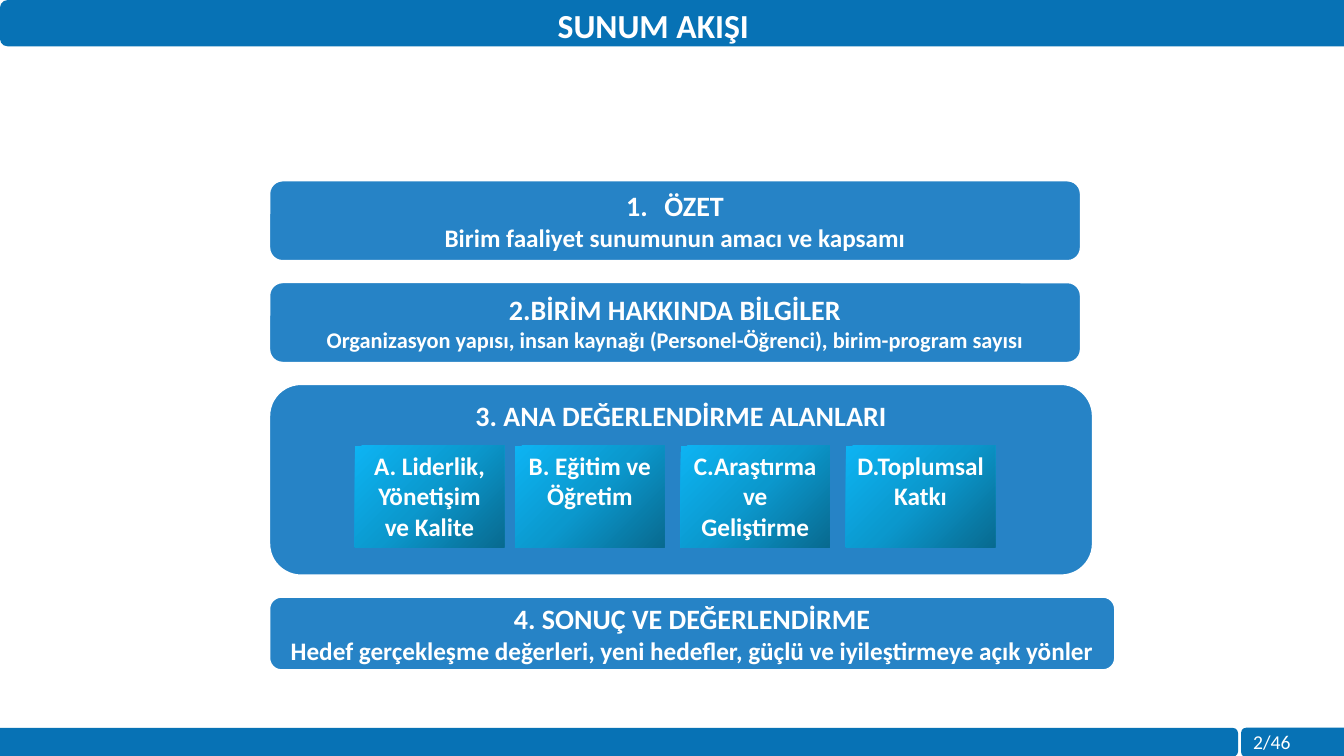
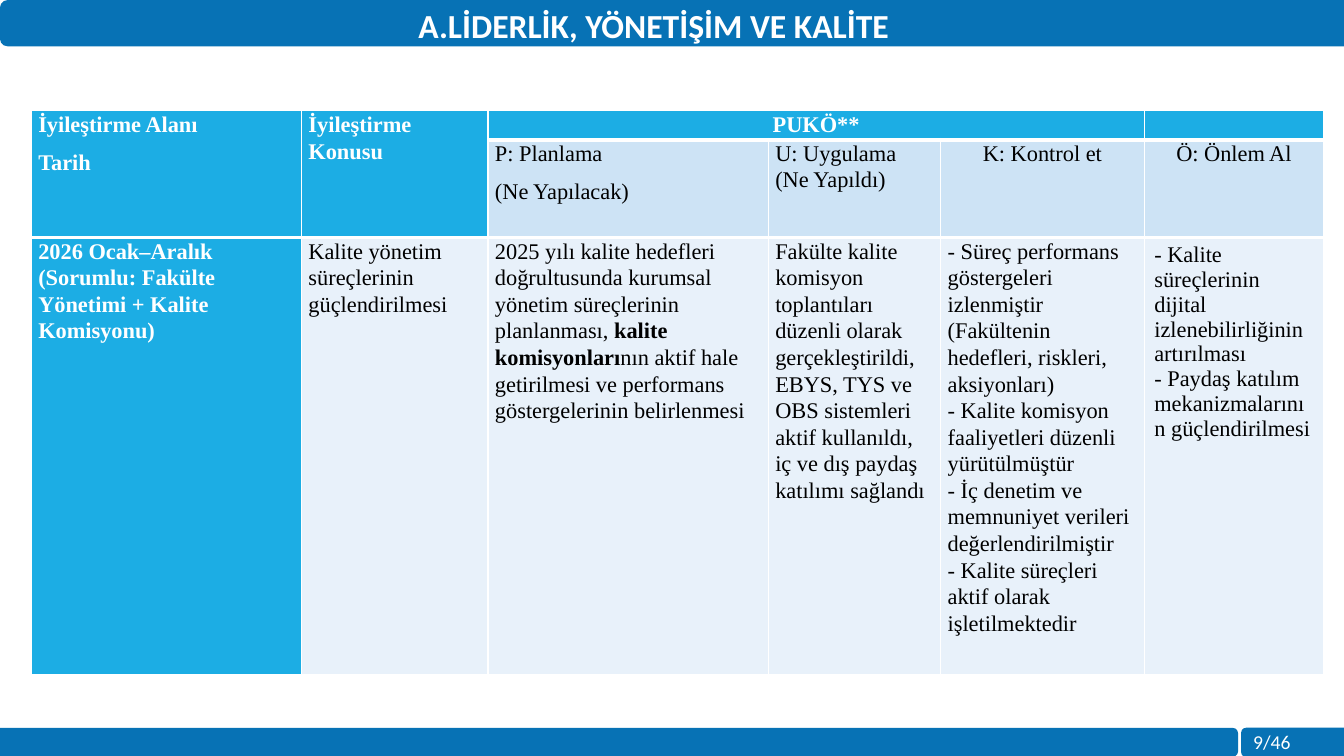
"""Build two slides: the agenda of a unit report and its improvement table."""
from lxml import etree
from pptx import Presentation
from pptx.dml.color import RGBColor
from pptx.enum.shapes import MSO_SHAPE
from pptx.enum.text import MSO_ANCHOR, MSO_AUTO_SIZE, PP_ALIGN
from pptx.oxml import parse_xml
from pptx.oxml.ns import nsdecls, qn
from pptx.util import Inches, Pt

BAND, ROUND, RECT = MSO_SHAPE.ROUND_2_SAME_RECTANGLE, MSO_SHAPE.ROUNDED_RECTANGLE, MSO_SHAPE.RECTANGLE
TOP, MIDDLE = MSO_ANCHOR.TOP, MSO_ANCHOR.MIDDLE
LEFT, CENTER, JUSTIFY = PP_ALIGN.LEFT, PP_ALIGN.CENTER, PP_ALIGN.JUSTIFY
HEX = {"white": "FFFFFF", "black": "000000", "band": "0772B5", "box": "2683C6",
       "head": "1CADE4", "sub": "CDE3F5", "body": "E8F1FA",
       "dark": "086A90", "mid": "0B98CD", "light": "0DB4F3"}
RGB = {name: RGBColor.from_string(code) for name, code in HEX.items()}
SANS, SERIF = "Calibri", "Times New Roman"


def write(frame, text, size=18, bold=True, color="white", font=SANS,
          align=CENTER, line=None, after=None, strong=""):
    para = frame.add_paragraph() if frame.text else frame.paragraphs[0]
    para.alignment = align
    if line:
        para.line_spacing = line
    if after:
        para.space_after = Pt(after)
    for part in text.partition(strong) if strong else (text,):
        for row, piece in enumerate(part.split("\n")):
            if row:
                para.add_line_break()
            run = para.add_run()
            run.text = piece
            run.font.name, run.font.size = font, Pt(size)
            run.font.bold = bold or part == strong
            run.font.color.rgb = RGB[color]
    return para


def block(slide, kind, left, top, width, height, fill=None, edge=None, weight=1.5):
    shape = slide.shapes.add_shape(kind, Inches(left), Inches(top), Inches(width), Inches(height))
    shape.shadow.inherit = False
    if fill:
        shape.fill.solid()
        shape.fill.fore_color.rgb = RGB[fill]
    if edge:
        shape.line.color.rgb = RGB[edge]
        shape.line.width = Pt(weight)
    else:
        shape.line.fill.background()
    return shape


deck = Presentation()
deck.slide_width, deck.slide_height = Inches(13.33), Inches(7.5)

heads = [("SUNUM AKIŞI", 4.26, 4.44, CENTER, "2/46"),
         ("A.LİDERLİK, YÖNETİŞİM VE KALİTE", 4.05, 6.74, LEFT, "9/46")]
bands = [(0, 7.23, 12.27, 0.27, 90, "band"),
         (12.31, 7.22, 1.02, 0.29, 270, None),
         (0, 0, 13.33, 0.46, 270, None)]
slides = []
for name, left, width, align, page in heads:
    slide = deck.slides.add_slide(deck.slide_layouts[5])
    slides.append(slide)
    title = slide.shapes.title
    title.left, title.top = Inches(left), Inches(0)
    title.width, title.height = Inches(width), Inches(0.5)
    frame = title.text_frame
    frame.word_wrap, frame.auto_size = True, MSO_AUTO_SIZE.NONE
    frame.vertical_anchor = TOP
    write(frame, name, size=24, align=align)
    for x, y, wide, high, turn, edge in bands:
        band = block(slide, BAND, x + (wide - high) / 2, y + (high - wide) / 2,
                     high, wide, "band", edge, 1.25)
        band.rotation = turn
        title.element.addprevious(band.element)
    label = slide.shapes.add_textbox(Inches(12.33), Inches(7.19), Inches(1.15), Inches(0.34))
    label.text_frame.word_wrap = True
    write(label.text_frame, page, size=14, bold=False, align=LEFT)

flow, plan = slides

boxes = [
    (8.05, 0.8, "ÖZET", "Birim faaliyet sunumunun amacı ve kapsamı", 18),
    (8.05, 0.8, "2.BİRİM HAKKINDA BİLGİLER",
     "Organizasyon yapısı, insan kaynağı (Personel-Öğrenci), birim-program sayısı", 16),
    (8.17, 1.9, "3. ANA DEĞERLENDİRME ALANLARI", "", 18),
    (8.39, 0.73, "4. SONUÇ VE DEĞERLENDİRME",
     "Hedef gerçekleşme değerleri, yeni hedefler, güçlü ve iyileştirmeye açık yönler", 18)]
top = 1.79
for width, height, name, note, size in boxes:
    frame = block(flow, ROUND, 2.67, top, width, height, "box", "white").text_frame
    frame.word_wrap = True
    frame.vertical_anchor = MIDDLE if note else TOP
    para = write(frame, name, size=20)
    if name == "ÖZET":
        props = para._p.get_or_add_pPr()
        props.set("marL", str(Inches(0.38)))
        props.set("indent", str(-Inches(0.38)))
        etree.SubElement(props, qn("a:buFont"), typeface="+mj-lt")
        etree.SubElement(props, qn("a:buAutoNum"), type="arabicPeriod")
    if note:
        write(frame, note, size=size)
    top += height + 0.21

stops = "".join(f'<a:gs pos="{pos}"><a:srgbClr val="{HEX[tone]}"/></a:gs>'
                for pos, tone in ((0, "dark"), (50000, "mid"), (100000, "light")))
cards = [(3.52, "A. Liderlik, Yönetişim ve Kalite"), (5.11, "B. Eğitim ve Öğretim"),
         (6.75, "C.Araştırma ve Geliştirme"), (8.39, "D.Toplumsal Katkı")]
for left, name in cards:
    card = block(flow, RECT, left, 4.42, 1.48, 1.01)
    card.element.spPr.insert(2, parse_xml(
        f'<a:gradFill {nsdecls("a")}><a:gsLst>{stops}</a:gsLst>'
        '<a:path path="circle"><a:fillToRect l="100000" t="100000"/></a:path></a:gradFill>'))
    card.text_frame.word_wrap = True
    card.text_frame.vertical_anchor = TOP
    write(card.text_frame, name)

cols, rows = [2.68, 1.85, 2.78, 1.71, 2.02, 1.78], [0.28, 0.97, 4.34]
grid = plan.shapes.add_table(len(rows), len(cols), Inches(0.31), Inches(1.1),
                             Inches(sum(cols)), Inches(sum(rows))).table
grid.horz_banding = False
for col, width in zip(grid.columns, cols):
    col.width = Inches(width)
for row, height in zip(grid.rows, rows):
    row.height = Inches(height)
for start, end in (((0, 0), (1, 0)), ((0, 1), (1, 1)), ((0, 2), (0, 4))):
    grid.cell(*start).merge(grid.cell(*end))

cells = [
    [["İyileştirme Alanı", "Tarih"], ["İyileştirme Konusu"], ["PUKÖ**"], [], [], []],
    [[], [], ["P: Planlama", "(Ne Yapılacak)"], ["U: Uygulama (Ne Yapıldı)"],
     ["K: Kontrol et"], ["Ö: Önlem Al"]],
    [["2026 Ocak–Aralık\n(Sorumlu: Fakülte Yönetimi + Kalite Komisyonu)"],
     ["Kalite yönetim süreçlerinin güçlendirilmesi"],
     ["2025 yılı kalite hedefleri doğrultusunda kurumsal yönetim süreçlerinin planlanması, "
      "kalite komisyonlarının aktif hale getirilmesi ve performans göstergelerinin belirlenmesi"],
     ["Fakülte kalite komisyon toplantıları düzenli olarak gerçekleştirildi, EBYS, TYS ve OBS "
      "sistemleri aktif kullanıldı, iç ve dış paydaş katılımı sağlandı"],
     ["- Süreç performans göstergeleri izlenmiştir (Fakültenin hedefleri, riskleri, aksiyonları)\n"
      "- Kalite komisyon faaliyetleri düzenli yürütülmüştür\n"
      "- İç denetim ve memnuniyet verileri değerlendirilmiştir\n"
      "- Kalite süreçleri aktif olarak işletilmektedir"],
     ["- Kalite süreçlerinin dijital izlenebilirliğinin artırılması\n"
      "- Paydaş katılım mekanizmalarının güçlendirilmesi"]]]
aligns = {(0, 0): JUSTIFY, (0, 2): CENTER, (1, 4): CENTER, (1, 5): CENTER}
for r, line in enumerate(cells):
    for c, texts in enumerate(line):
        cell = grid.cell(r, c)
        head = r == 0 or c == 0 or (r == 1 and c == 1)
        last = (r, c) == (2, 5)
        cell.fill.solid()
        cell.fill.fore_color.rgb = RGB["head" if head else ("sub" if r == 1 else "body")]
        if not last:
            cell.margin_left = cell.margin_right = Inches(0.07)
            cell.margin_top = cell.margin_bottom = Inches(0)
        for spot, side in enumerate(("lnL", "lnR", "lnT", "lnB")):
            weight = 3 if side == "lnB" and r < 2 else 1
            cell._tc.get_or_add_tcPr().insert(spot, parse_xml(
                f'<a:{side} {nsdecls("a")} w="{Pt(weight)}"><a:solidFill>'
                f'<a:srgbClr val="{HEX["white"]}"/></a:solidFill></a:{side}>'))
        for text in texts:
            write(cell.text_frame, text, size=16, bold=head, color="white" if head else "black",
                  font=SERIF, align=aligns.get((r, c), LEFT), line=None if last else 1.07,
                  after=None if last else 8,
                  strong="kalite komisyonları" if (r, c) == (2, 2) else "")
        if not texts:
            etree.SubElement(cell.text_frame.paragraphs[0]._p, qn("a:endParaRPr"), sz="1200")

deck.save("out.pptx")
